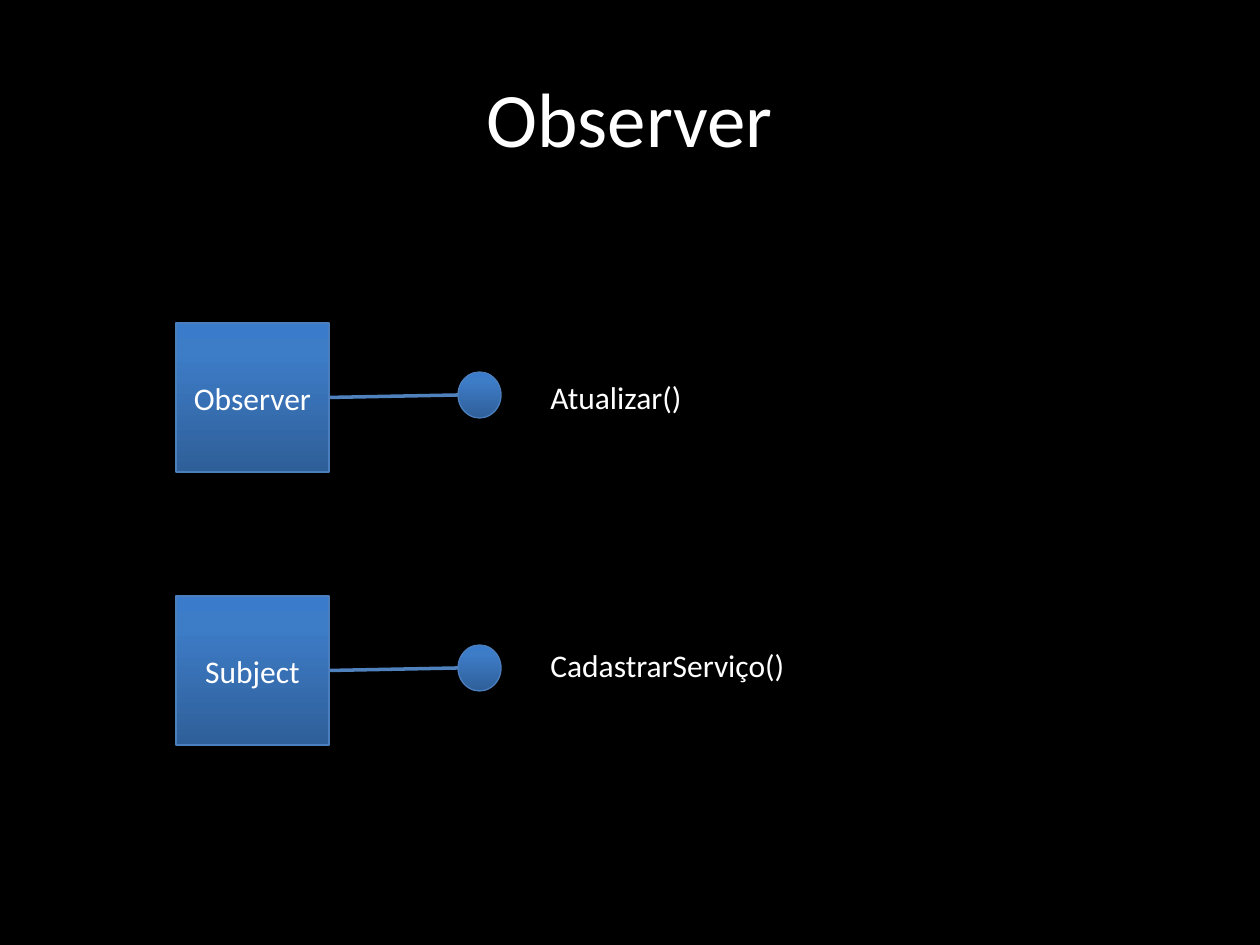
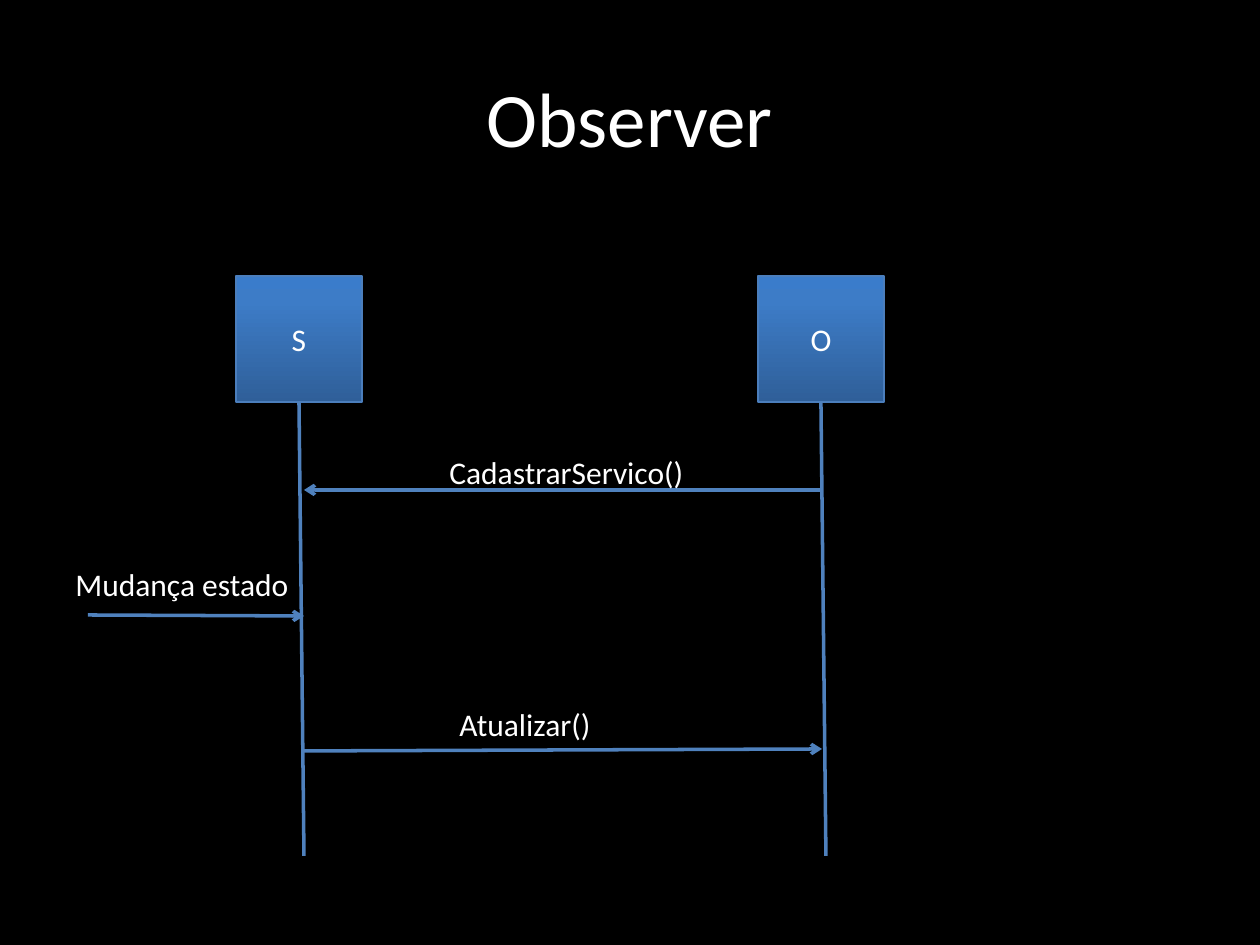
import copy

import pptx
import pptx.dml.color
import pptx.enum.shapes
import pptx.enum.text
import pptx.oxml
import pptx.oxml.ns
import pptx.util
from lxml import etree

PX = 914400 // 126
FONT = "Calibri"
COLORS = {
    "background": "000000",
    "text": "FFFFFF",
    "outline": "4B7EBC",
    "line": "4F81BD",
}
GRADIENT = [(0, "2F5F99"), (0.8, "3D7CC7"), (1, "3A7CCB")]
SHAPE = pptx.enum.shapes.MSO_SHAPE
CENTER = pptx.enum.text.PP_ALIGN.CENTER
MIDDLE = pptx.enum.text.MSO_ANCHOR.MIDDLE
BOTTOM_SIDE, RIGHT_SIDE = 2, 3
LABEL_HEIGHT = 50


def emu(*lengths):
    return [pptx.util.Emu(length * PX) for length in lengths]


def rgb(color):
    return pptx.dml.color.RGBColor.from_string(color)


def write(frame, text, size=18, align=None):
    paragraph = frame.paragraphs[0]
    paragraph.alignment = align
    run = paragraph.add_run()
    run.text = text
    run.font.name = FONT
    run.font.size = pptx.util.Pt(size)
    run.font.color.rgb = rgb(COLORS["text"])


def add_titled_slide(prs, title):
    slide = prs.slides.add_slide(prs.slide_layouts[5])
    heading = slide.shapes.title
    heading.left, heading.top, heading.width, heading.height = emu(63, 38, 1134, 158)
    heading.text_frame.vertical_anchor = MIDDLE
    write(heading.text_frame, title, 44, CENTER)
    return slide


def add_node(slide, kind, box, text=None):
    """Add a gradient-filled shape, with centred text if given."""
    node = slide.shapes.add_shape(kind, *emu(*box))
    node.shadow.inherit = False
    node.fill.gradient()
    node.fill.gradient_angle = 90
    stop_list = node.element.spPr.find(".//" + pptx.oxml.ns.qn("a:gsLst"))
    stop_list.append(copy.deepcopy(stop_list[0]))
    for stop, (position, color) in zip(node.fill.gradient_stops, GRADIENT):
        stop.position = position
        stop.color.rgb = rgb(color)
    node.line.color.rgb = rgb(COLORS["outline"])
    node.line.width = pptx.util.Pt(0.75)
    if text:
        node.text_frame.vertical_anchor = MIDDLE
        write(node.text_frame, text, align=CENTER)
    return node


def add_line(slide, start, end, arrow=False):
    line = slide.shapes.add_connector(
        pptx.enum.shapes.MSO_CONNECTOR.STRAIGHT, *emu(*start, *end))
    line.line.color.rgb = rgb(COLORS["line"])
    line.line.width = pptx.util.Pt(2)
    qn = pptx.oxml.ns.qn
    properties = line.element.spPr
    if arrow:
        etree.SubElement(properties.find(qn("a:ln")), qn("a:tailEnd"), type="arrow")
    etree.SubElement(properties, qn("a:effectLst"))
    return line


def add_label(slide, left, top, width, text):
    label = slide.shapes.add_textbox(*emu(left, top, width, LABEL_HEIGHT))
    label.text_frame.word_wrap = False
    label.text_frame.auto_size = pptx.enum.text.MSO_AUTO_SIZE.SHAPE_TO_FIT_TEXT
    write(label.text_frame, text)


def add_interface(slide, left, top, name, operation, label_width, label_drop):
    """Draw a class box with its interface circle and operation name."""
    width, height = 153, 149
    class_box = add_node(slide, SHAPE.RECTANGLE, (left, top, width, height), name)
    circle_left, circle_top = left + 282, top + 49
    add_node(slide, SHAPE.OVAL, (circle_left, circle_top, 43, 46))
    link = add_line(slide, (left + width, top + height // 2),
                    (circle_left, circle_top + 23))
    link.begin_connect(class_box, RIGHT_SIDE)
    add_label(slide, left + 362, top + label_drop, label_width, operation)


def add_lifeline(slide, left, top, name):
    size = 126
    head = add_node(slide, SHAPE.RECTANGLE, (left, top, size, size), name)
    center, bottom = left + size // 2, top + size
    lifeline = add_line(slide, (center, bottom), (center + 5, bottom + 454))
    lifeline.begin_connect(head, BOTTOM_SIDE)


def build_class_slide(prs):
    slide = add_titled_slide(prs, "Observer")
    interfaces = [
        ("Observer", "Atualizar()", 159, 49),
        ("Subject", "CadastrarServiço()", 263, 44),
    ]
    for row, interface in enumerate(interfaces):
        add_interface(slide, 176, 323 + row * 273, *interface)


def build_sequence_slide(prs):
    slide = add_titled_slide(prs, "Observer")
    for left, name in [(236, "S"), (758, "O")]:
        add_lifeline(slide, left, 276, name)
    subject_x, observer_x = 304, 822
    messages = [
        ((observer_x, 490), (subject_x, 490), (437, 447, 263), "CadastrarServico()"),
        ((subject_x, 751), (observer_x, 749), (447, 699, 159), "Atualizar()"),
        ((88, 615), (subject_x, 616), (63, 559, 242), "Mudança estado"),
    ]
    for start, end, label_place, text in messages:
        add_line(slide, start, end, arrow=True)
        add_label(slide, *label_place, text)


def main():
    prs = pptx.Presentation()
    prs.slide_width, prs.slide_height = emu(1260, 945)
    backdrop = prs.slide_master.background.fill
    backdrop.solid()
    backdrop.fore_color.rgb = rgb(COLORS["background"])
    build_class_slide(prs)
    build_sequence_slide(prs)
    prs.save("out.pptx")


if __name__ == "__main__":
    main()
